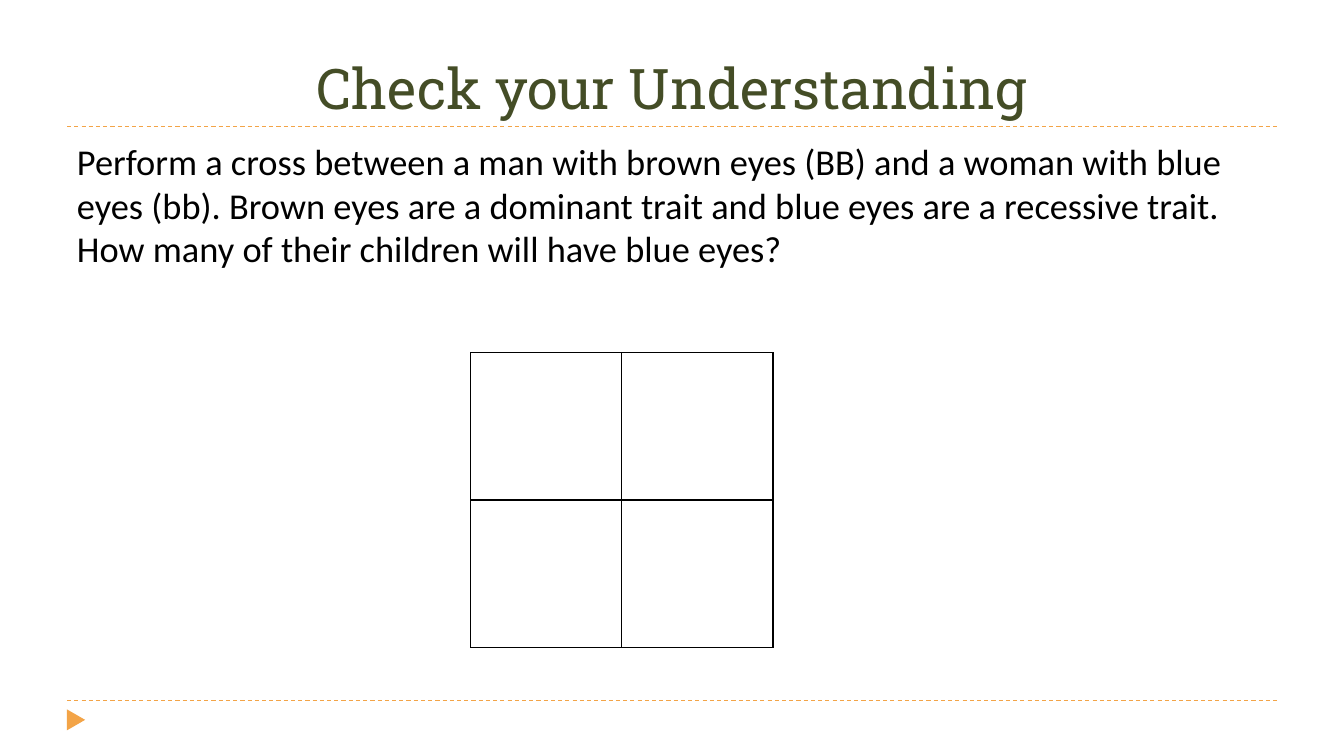
from lxml import etree
from pptx import Presentation
from pptx.dml.color import RGBColor
from pptx.enum.dml import MSO_LINE
from pptx.enum.shapes import MSO_CONNECTOR, MSO_SHAPE
from pptx.enum.text import MSO_ANCHOR, MSO_AUTO_SIZE, PP_ALIGN
from pptx.oxml.ns import qn
from pptx.util import Cm, Pt

ORANGE = RGBColor(0xF3, 0xA4, 0x47)
OLIVE = RGBColor(0x44, 0x4D, 0x26)
BLACK = RGBColor(0, 0, 0)
WHITE = RGBColor(255, 255, 255)
DASH = MSO_LINE.DASH
STRAIGHT = MSO_CONNECTOR.STRAIGHT
TRIANGLE = MSO_SHAPE.ISOSCELES_TRIANGLE
TOP, BOTTOM = MSO_ANCHOR.TOP, MSO_ANCHOR.BOTTOM
NO_AUTOFIT = MSO_AUTO_SIZE.NONE
LEFT, CENTER = PP_ALIGN.LEFT, PP_ALIGN.CENTER

MARGIN = Cm(1.69)
CONTENT_WIDTH = Cm(30.48)
QUESTION = (
    "Perform a cross between a man with brown eyes (BB) and a woman with blue "
    "eyes (bb). Brown eyes are a dominant trait and blue eyes are a recessive "
    "trait. How many of their children will have blue eyes?"
)


def write_text(holder, text, *, font, size, color, align=LEFT, anchor=TOP):
    """Fill a text holder with one formatted paragraph."""
    frame = holder.text_frame
    frame.word_wrap = True
    frame.auto_size = NO_AUTOFIT
    frame.vertical_anchor = anchor
    paragraph = frame.paragraphs[0]
    paragraph.text = text
    paragraph.alignment = align
    paragraph.font.name = font
    paragraph.font.size = Pt(size)
    paragraph.font.color.rgb = color


def place(holder, left, top, width, height):
    """Set the position and size of a shape."""
    holder.left, holder.top = left, top
    holder.width, holder.height = width, height


def add_rule(slide, top):
    """Draw a dashed rule across the content width."""
    rule = slide.shapes.add_connector(
        STRAIGHT, MARGIN, top, MARGIN + CONTENT_WIDTH, top
    )
    rule.line.color.rgb = ORANGE
    rule.line.width = Pt(0.75)
    rule.line.dash_style = DASH
    etree.SubElement(rule._element.spPr, qn("a:effectLst"))


def add_footer_marker(slide):
    """Draw the triangle that points right below the footer rule."""
    marker = slide.shapes.add_shape(
        TRIANGLE, Cm(1.65), Cm(17.91), Cm(0.53), Cm(0.46)
    )
    marker.rotation = 90
    marker.shadow.inherit = False
    marker.fill.solid()
    marker.fill.fore_color.rgb = ORANGE
    marker.line.fill.background()


def add_borders(cell):
    """Give a cell a thin black border on all four sides."""
    properties = cell._tc.get_or_add_tcPr()
    for index, side in enumerate(("lnL", "lnR", "lnT", "lnB")):
        border = etree.Element(qn(f"a:{side}"), w=str(Pt(1)))
        fill = etree.SubElement(border, qn("a:solidFill"))
        etree.SubElement(fill, qn("a:srgbClr"), val=str(BLACK))
        properties.insert(index, border)


def add_punnett_square(slide):
    """Add the empty two by two Punnett square."""
    square = slide.shapes.add_table(
        2, 2, Cm(11.86), Cm(8.89), Cm(7.62), Cm(7.42)
    ).table
    square.first_row = False
    square.horz_banding = False
    for cell in square.iter_cells():
        cell.fill.solid()
        cell.fill.fore_color.rgb = WHITE
        add_borders(cell)


def main():
    """Build and save the slide."""
    deck = Presentation()
    deck.slide_width, deck.slide_height = Cm(33.87), Cm(19.05)
    slide = deck.slides.add_slide(deck.slide_layouts[5])

    for top in (Cm(17.65), Cm(3.18)):
        add_rule(slide, top)
    add_footer_marker(slide)

    title = slide.shapes.title
    place(title, MARGIN, Cm(0.43), CONTENT_WIDTH, Cm(2.74))
    write_text(title, "Check your Understanding", font="Roboto Slab", size=40,
               color=OLIVE, align=CENTER, anchor=BOTTOM)

    question = slide.shapes.add_textbox(
        MARGIN, Cm(3.38), CONTENT_WIDTH, Cm(3.61)
    )
    write_text(question, QUESTION, font="Calibri", size=26, color=BLACK)

    add_punnett_square(slide)
    deck.save("out.pptx")


if __name__ == "__main__":
    main()
